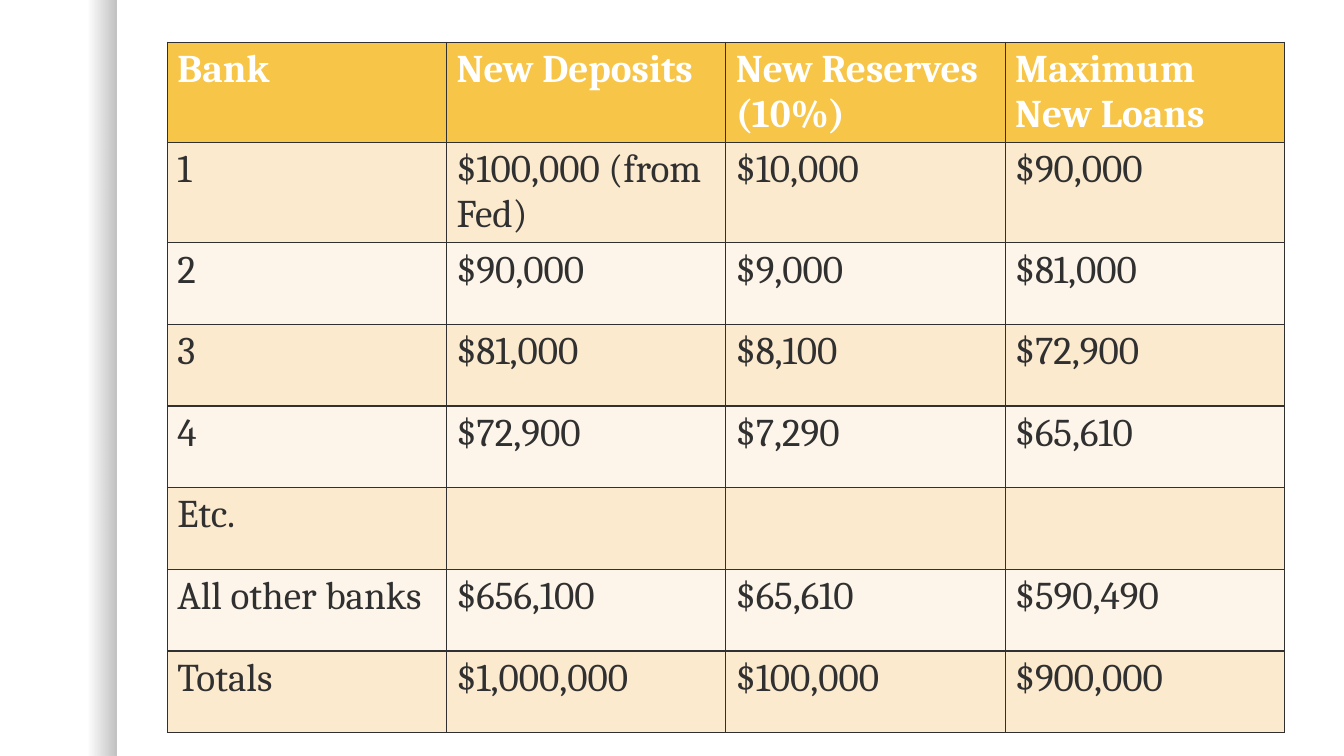
from dataclasses import dataclass

from lxml import etree
from pptx import Presentation
from pptx.dml.color import RGBColor
from pptx.oxml.ns import qn
from pptx.enum.shapes import MSO_SHAPE
from pptx.util import Inches, Pt

RECTANGLE = MSO_SHAPE.RECTANGLE

ROWS = [
    ("Bank", "New Deposits", "New Reserves (10%)", "Maximum New Loans"),
    ("1", "$100,000 (from Fed)", "$10,000", "$90,000"),
    ("2", "$90,000", "$9,000", "$81,000"),
    ("3", "$81,000", "$8,100", "$72,900"),
    ("4", "$72,900", "$7,290", "$65,610"),
    ("Etc.", "", "", ""),
    ("All other banks", "$656,100", "$65,610", "$590,490"),
    ("Totals", "$1,000,000", "$100,000", "$900,000"),
]


@dataclass(frozen=True)
class Theme:
    """Colours, font and sizes of the slide."""

    font: str = "Cambria"
    size: int = 28
    border_width: int = 1
    text: str = "303030"
    header_text: str = "FFFFFF"
    header_fill: str = "F7C547"
    bands: tuple = ("FCEACF", "FDF5E9")
    shade: str = "000000"


class SlideBuilder:
    """Draws elements on the current slide in one theme."""

    def __init__(self, slide, theme):
        """Keep the slide and its theme."""
        self.slide = slide
        self.theme = theme

    def edge_shadow(self, width, height):
        """Draw the strip that darkens towards its right side."""
        sp = self.slide.shapes.add_shape(RECTANGLE, 0, 0, Inches(width), Inches(height))
        sp.shadow.inherit = False
        sp.line.fill.background()
        sp.fill.gradient()
        sp.fill.gradient_angle = 0
        for stop, position in zip(sp.fill.gradient_stops, (0.75, 1)):
            stop.position = position
            stop.color.rgb = RGBColor.from_string(self.theme.shade)
        stops = sp.element.spPr.iter(qn("a:srgbClr"))
        for color, opacity in zip(list(stops), (0, 25)):
            etree.SubElement(color, qn("a:alpha"), val=str(opacity * 1000))

    def table(self, rows, left, top, column_width, row_height):
        """Add a table with a header row and banded body rows."""
        count = len(rows[0])
        table = self.slide.shapes.add_table(
            len(rows), count, Inches(left), Inches(top),
            Inches(column_width * count), Inches(row_height * len(rows)),
        ).table
        for i, values in enumerate(rows):
            header = i == 0
            fill = self.theme.header_fill if header else self.theme.bands[(i - 1) % 2]
            for j, value in enumerate(values):
                self.cell(table.cell(i, j), value, fill, header)

    def cell(self, cell, value, fill, header):
        """Fill in one table cell."""
        theme = self.theme
        cell.fill.solid()
        cell.fill.fore_color.rgb = RGBColor.from_string(fill)
        self.borders(cell)
        cell.text = value
        font = cell.text_frame.paragraphs[0].font
        font.name = theme.font
        font.size = Pt(theme.size)
        font.bold = header
        font.color.rgb = RGBColor.from_string(theme.header_text if header else theme.text)

    def borders(self, cell):
        """Line all four sides of a cell."""
        tc_pr = cell._tc.get_or_add_tcPr()
        for i, side in enumerate(("lnL", "lnR", "lnT", "lnB")):
            ln = etree.Element(qn(f"a:{side}"), w=str(Pt(self.theme.border_width)))
            solid = etree.SubElement(ln, qn("a:solidFill"))
            etree.SubElement(solid, qn("a:srgbClr"), val=self.theme.text)
            tc_pr.insert(i, ln)


def main():
    """Build and save the slide."""
    prs = Presentation()
    prs.slide_width = Inches(13.33)
    prs.slide_height = Inches(7.5)
    s = SlideBuilder(prs.slides.add_slide(prs.slide_layouts[6]), Theme())
    s.edge_shadow(1.16, 7.5)
    s.table(ROWS, left=1.66, top=0.42, column_width=2.77, row_height=0.81)
    prs.save("out.pptx")


if __name__ == "__main__":
    main()
